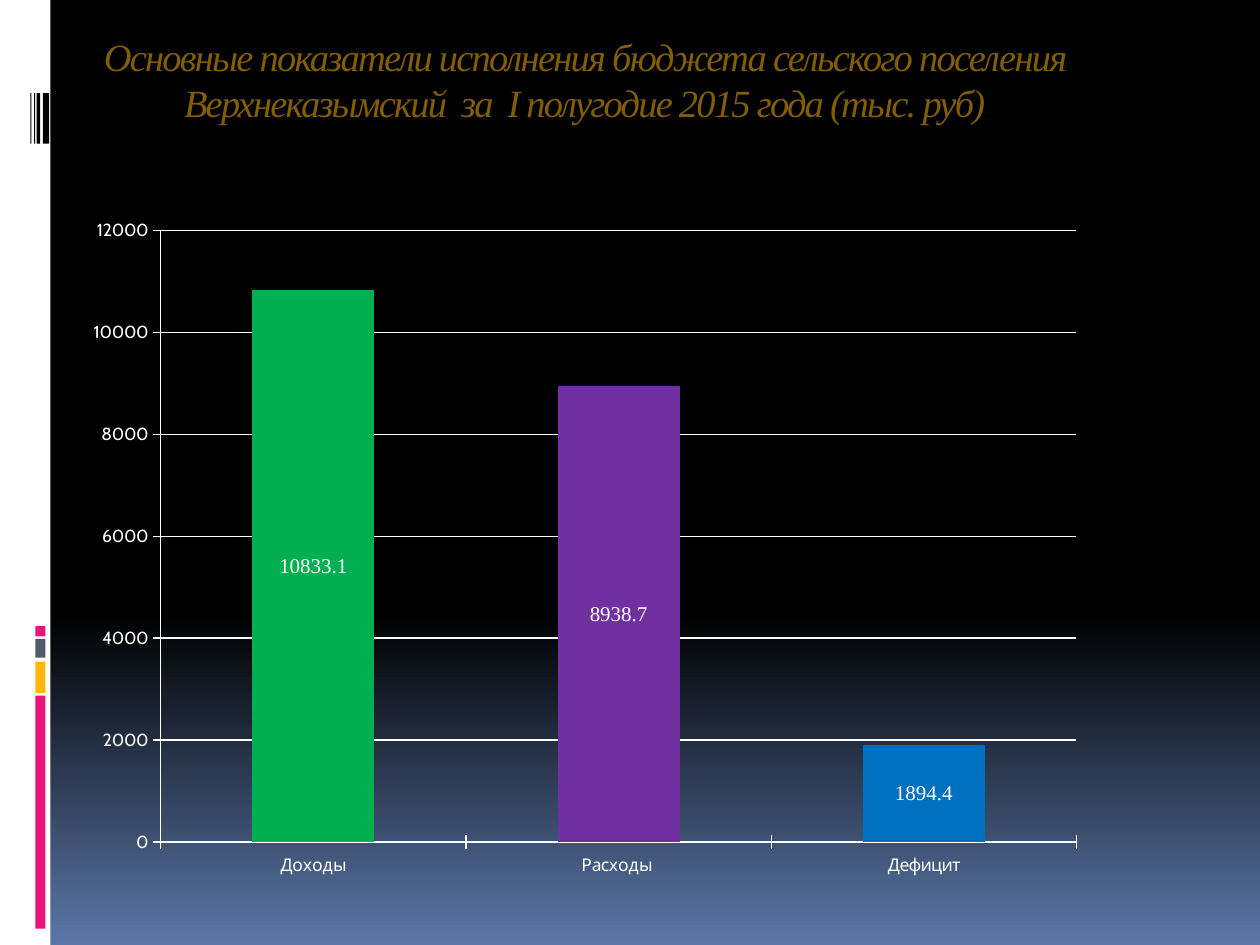
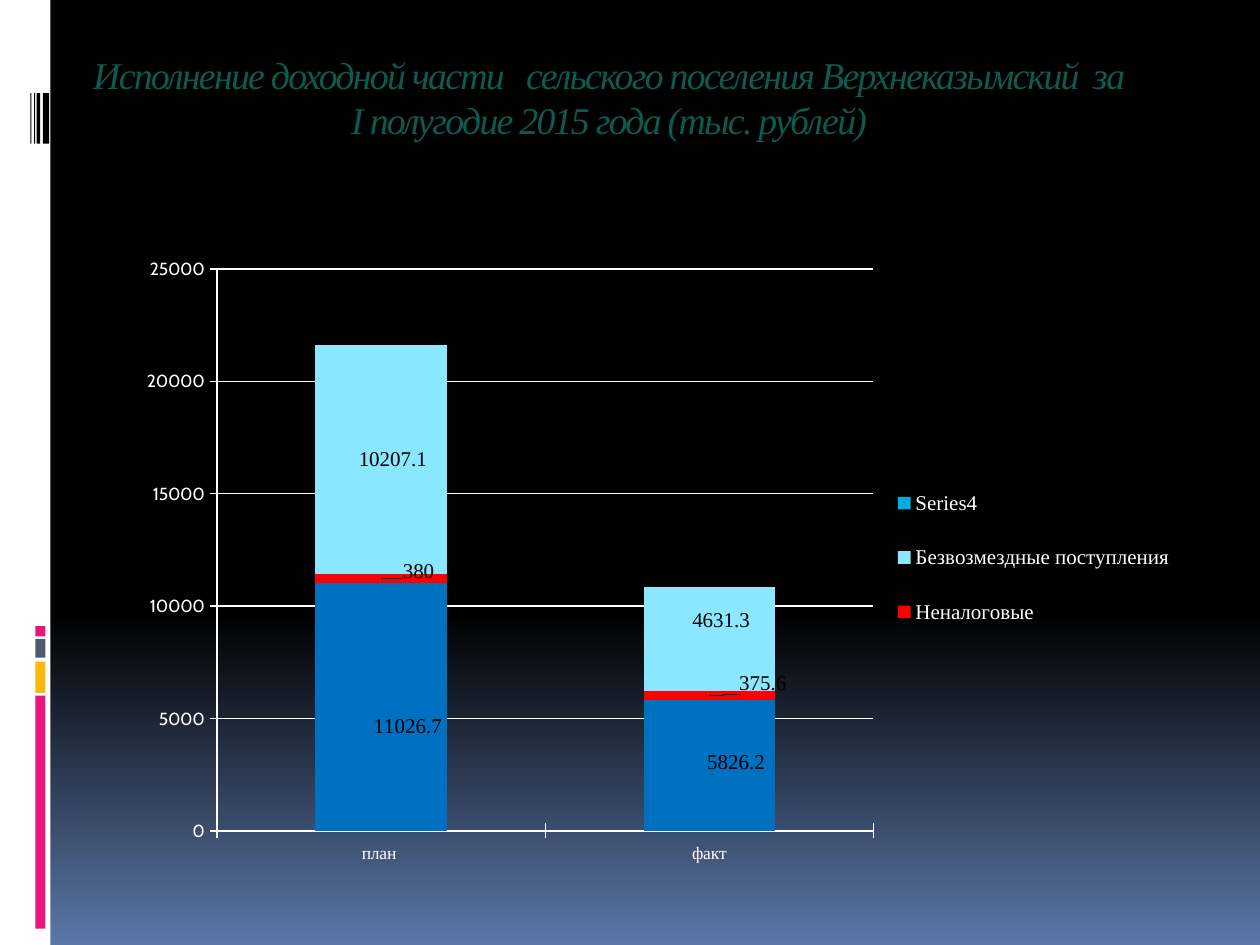
from lxml import etree
from pptx import Presentation
from pptx.chart import data as chart_data
from pptx.dml import color
from pptx.enum import chart as charts, shapes, text
from pptx.oxml import ns
from pptx import util as u

COLUMNS, ROWS = 100, 75
SERIF, SANS = "Times New Roman", "Cabin"
WHITE, BLACK, PINK, AMBER, SLATE = "FFFFFF", "000000", "EA157A", "FEB80A", "4E5B6F"
SKY_TOP, SKY_BOTTOM = BLACK, "5B77A8"

SIDEBAR = (0, 0, 4, ROWS)
ACCENT_LEFT, ACCENT_WIDTH = 2.8, 0.8
ACCENTS = [(49.7, 0.8, PINK), (50.7, 1.5, SLATE), (52.5, 2.5, AMBER), (55.2, 18.5, PINK)]
BARCODE_TOP, BARCODE_HEIGHT = 7.4, 4
BARCODE = [(2.4, 0.1), (2.7, 0.1), (2.9, 0.3), (3.4, 0.5)]

BUDGET = {
    "title": "Основные показатели исполнения бюджета сельского поселения "
             "Верхнеказымский  за  I полугодие 2015 года (тыс. руб)",
    "title_box": (3.5, 2.1, 85.8, 10.2),
    "title_size": 22,
    "title_color": "835E01",
    "chart_box": (3.5, 13.9, 85, 58.3),
    "plot": (10.9, 7.5, 85.5, 83.3),
    "category_font": SANS,
    "label_color": WHITE,
    "categories": ["Доходы", "Расходы ", "Дефицит"],
    "series": [
        {"name": "Series 1", "values": [10833.1, 8938.7, 1894.4], "color": "7FD13B",
         "points": ["00B050", "7030A0", "0070C0"]},
    ],
}

INCOME = {
    "title": "Исполнение доходной части   сельского поселения Верхнеказымский  за\n"
             " I полугодие 2015 года (тыс. рублей) ",
    "title_box": (5, 3.6, 86.7, 10.2),
    "title_size": 21.6,
    "title_color": "0D5A4F",
    "chart_box": (10, 19.5, 85, 50),
    "plot": (8.5, 3.7, 61.3, 89.2),
    "legend": (71.5, 34, 27, 31),
    "category_font": SERIF,
    "label_color": BLACK,
    "categories": ["план ", "факт"],
    "series": [
        {"name": "Series 1", "values": [11026.7, 5826.2], "color": "0070C0",
         "offsets": [(2.5, 3), (2.5, -0.5)]},
        {"name": "Неналоговые", "values": [403, 375.6], "color": "FF0000",
         "offsets": [(3.5, -1.1), (5, -2)], "captions": {0: "380"}},
        {"name": "Безвозмездные поступления ", "values": [10207.1, 4631.3],
         "color": "8BE6FF", "offsets": [(1.1, 0), (1.1, -3)]},
        {"name": "Series4", "values": [None, None], "color": "00ADDC"},
    ],
}


def rgb(value):
    return color.RGBColor.from_string(value)


def set_all(target, values):
    for name, value in values.items():
        setattr(target, name, value)


def set_font(font, size, name, value):
    set_all(font, {"size": u.Pt(size), "name": name})
    font.color.rgb = rgb(value)


def fill_solid(fill, value):
    fill.solid()
    fill.fore_color.rgb = rgb(value)


def place(presentation, box):
    column = presentation.slide_width / COLUMNS
    row = presentation.slide_height / ROWS
    left, top, width, height = box
    return int(left * column), int(top * row), int(width * column), int(height * row)


def manual_layout(percents, inner=False, edge=True):
    layout = etree.Element(ns.qn("c:layout"))
    manual = etree.SubElement(layout, ns.qn("c:manualLayout"))
    settings = [("layoutTarget", "inner")] if inner else []
    if edge:
        settings += [("xMode", "edge"), ("yMode", "edge")]
    settings += [(name, f"{percent / 100:.3f}") for name, percent in zip("xywh", percents)]
    for name, value in settings:
        etree.SubElement(manual, ns.qn(f"c:{name}"), val=value)
    return layout


def drop_layout(parent):
    for layout in parent.findall(ns.qn("c:layout")):
        parent.remove(layout)


def add_bar(presentation, slide, box, value):
    shape = slide.shapes.add_shape(shapes.MSO_SHAPE.RECTANGLE, *place(presentation, box))
    shape.shadow.inherit = False
    fill_solid(shape.fill, value)
    shape.line.fill.background()


def add_background(slide):
    fill = slide.background.fill
    fill.gradient()
    fill.gradient_angle = 270
    for stop, position, value in zip(fill.gradient_stops, (0.65, 1), (SKY_TOP, SKY_BOTTOM)):
        stop.position = position
        stop.color.rgb = rgb(value)


def add_sidebar(presentation, slide):
    add_bar(presentation, slide, SIDEBAR, WHITE)
    for top, height, value in ACCENTS:
        add_bar(presentation, slide, (ACCENT_LEFT, top, ACCENT_WIDTH, height), value)
    for left, width in BARCODE:
        add_bar(presentation, slide, (left, BARCODE_TOP, width, BARCODE_HEIGHT), BLACK)


def add_title(presentation, slide, content):
    title = slide.shapes.title
    bounds = place(presentation, content["title_box"])
    set_all(title, dict(zip(("left", "top", "width", "height"), bounds)))
    frame = title.text_frame
    set_all(frame, {"word_wrap": True, "auto_size": text.MSO_AUTO_SIZE.NONE,
                    "vertical_anchor": text.MSO_ANCHOR.TOP})
    paragraph = frame.paragraphs[0]
    paragraph.alignment = text.PP_ALIGN.CENTER
    for index, line in enumerate(content["title"].split("\n")):
        if index:
            paragraph.add_line_break()
        run = paragraph.add_run()
        run.text = line
        set_font(run.font, content["title_size"], SERIF, content["title_color"])
        run.font.italic = True
        run._r.get_or_add_rPr().set("spc", "-100")


def format_axes(chart, category_font):
    for axis, name in ((chart.category_axis, category_font), (chart.value_axis, SANS)):
        axis.major_tick_mark = charts.XL_TICK_MARK.CROSS
        axis.format.line.color.rgb = rgb(WHITE)
        set_font(axis.tick_labels.font, 10, name, WHITE)
    chart.category_axis.has_major_gridlines = False
    chart.value_axis.has_major_gridlines = True
    chart.value_axis.major_gridlines.format.line.color.rgb = rgb(WHITE)


def format_labels(series, row, value):
    labels = series.data_labels
    set_all(labels, {"show_value": True, "number_format": "0.0",
                     "number_format_is_linked": False})
    set_font(labels.font, 12, SERIF, value)
    captions = row.get("captions", {})
    for index, offset in enumerate(row.get("offsets", [])):
        label = series.points[index].data_label
        if index in captions:
            run = label.text_frame.paragraphs[0].add_run()
            run.text = captions[index]
            set_font(run.font, 12, SERIF, value)
        else:
            set_font(label.font, 12, SERIF, value)
        element = series._element.xpath(f"c:dLbls/c:dLbl[c:idx/@val='{index}']")[0]
        drop_layout(element)
        element[0].addnext(manual_layout(offset, edge=False))


def add_legend(chart, percents):
    chart.has_legend = True
    set_all(chart.legend, {"position": charts.XL_LEGEND_POSITION.RIGHT,
                           "include_in_layout": False})
    set_font(chart.legend.font, 12, SERIF, WHITE)
    element = chart.legend._element
    drop_layout(element)
    hidden = etree.Element(ns.qn("c:legendEntry"))
    etree.SubElement(hidden, ns.qn("c:idx"), val="0")
    etree.SubElement(hidden, ns.qn("c:delete"), val="1")
    position = element.find(ns.qn("c:legendPos"))
    position.addnext(hidden)
    hidden.addnext(manual_layout(percents))


def add_stacked_chart(presentation, slide, content):
    data = chart_data.CategoryChartData()
    data.categories = content["categories"]
    for row in content["series"]:
        data.add_series(row["name"], row["values"])
    bounds = place(presentation, content["chart_box"])
    chart = slide.shapes.add_chart(charts.XL_CHART_TYPE.COLUMN_STACKED, *bounds, data).chart
    set_all(chart, {"has_title": False, "has_legend": False})
    set_font(chart.font, 10, SANS, WHITE)
    format_axes(chart, content["category_font"])
    plot = chart.plots[0]
    set_all(plot, {"gap_width": 150, "overlap": 100, "vary_by_categories": False})
    for series, row in zip(plot.series, content["series"]):
        fill_solid(series.format.fill, row["color"])
        for index, value in enumerate(row.get("points", [])):
            fill_solid(series.points[index].format.fill, value)
        if None not in row["values"]:
            format_labels(series, row, content["label_color"])
    area = chart._chartSpace.chart.plotArea
    drop_layout(area)
    area.insert(0, manual_layout(content["plot"], inner=True))
    if "legend" in content:
        add_legend(chart, content["legend"])


def add_chart_slide(presentation, content):
    slide = presentation.slides.add_slide(presentation.slide_layouts[5])
    add_background(slide)
    add_sidebar(presentation, slide)
    add_title(presentation, slide, content)
    add_stacked_chart(presentation, slide, content)


def main():
    presentation = Presentation()
    set_all(presentation, {"slide_width": u.Inches(10), "slide_height": u.Inches(7.5)})
    for content in (BUDGET, INCOME):
        add_chart_slide(presentation, content)
    presentation.save("out.pptx")


if __name__ == "__main__":
    main()
